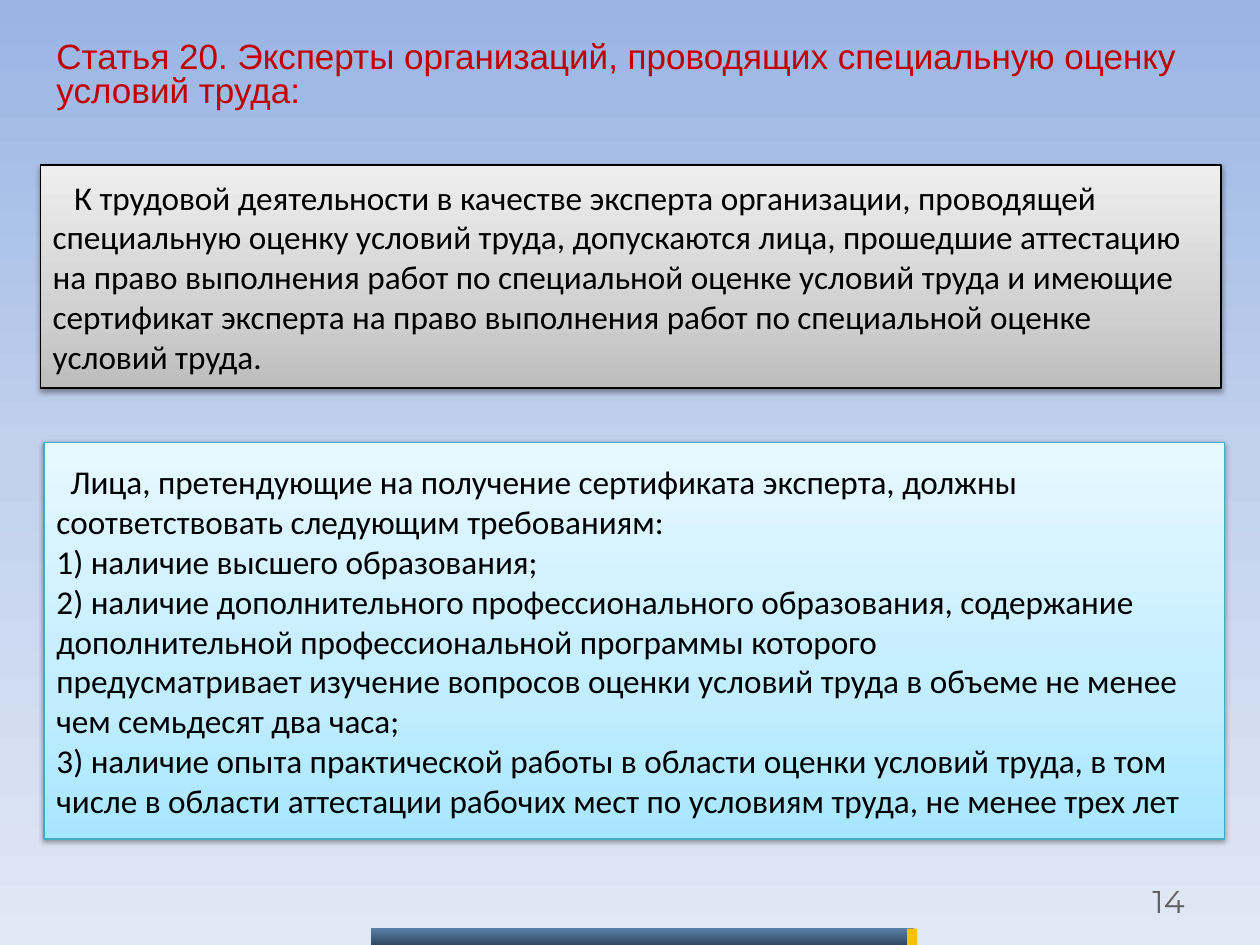
"""Build the slide on Article 20, experts of assessment organizations."""
from lxml.etree import SubElement
from pptx import Presentation
from pptx.dml.color import RGBColor as Rgb
from pptx.enum.shapes import MSO_SHAPE as Shape
from pptx.enum.text import MSO_ANCHOR as Anchor, PP_ALIGN as Align
from pptx.oxml.ns import qn
from pptx.util import Inches, Pt

HUES = {
    "sky": "9AB5E4", "haze": "C2D1ED", "mist": "E1E8F5",
    "navy": "003C73", "night": "001C35", "gold": "FFC000",
    "steel": "BDBDBD", "ash": "D1D1D1", "pale": "EEEEEE",
    "aqua": "A7E6FF", "ice": "C1EDFF", "frost": "E7F8FF",
    "teal": "46AAC5", "black": "000000", "red": "C00000", "gray": "626262",
}


def blend(part, root, stops, angle):
    part.fill.gradient()
    grad = root.find(".//" + qn("a:gradFill"))
    grad.find(qn("a:lin")).set("ang", str(angle * 60000))
    ramp = grad.find(qn("a:gsLst"))
    ramp.clear()
    for place, hue, alpha in stops:
        stop = SubElement(ramp, qn("a:gs"), pos=str(place * 1000))
        tint = SubElement(stop, qn("a:srgbClr"), val=HUES[hue])
        if alpha < 100:
            SubElement(tint, qn("a:alpha"), val=str(alpha * 1000))


def write(frame, lines, font, size, hue, **form):
    frame.word_wrap = True
    frame.vertical_anchor = Anchor.MIDDLE
    for i, line in enumerate(lines):
        para = frame.paragraphs[0] if i == 0 else frame.add_paragraph()
        for key, value in form.items():
            setattr(para, key, value)
        run = para.add_run()
        run.text = line
        for key, value in {"name": font, "size": Pt(size)}.items():
            setattr(run.font, key, value)
        run.font.color.rgb = Rgb.from_string(HUES[hue])


deck = Presentation()
deck.slide_width, deck.slide_height = Inches(10), Inches(7.5)
slide = deck.slides.add_slide(deck.slide_layouts[6])
shapes = slide.shapes
blend(slide.background, slide.element,
      [(0, "sky", 100), (50, "haze", 100), (100, "mist", 100)], 90)

labels = [
    ((8.94, 6.95, 0.56, 0.4), "14", "Montserrat", 18, "gray",
     {"alignment": Align.RIGHT}),
    ((0.35, 0.21, 9.37, 0.79),
     "Статья 20. Эксперты организаций, проводящих специальную оценку условий труда:",
     "Arial", 20, "red", {"line_spacing": 0.8}),
]
for box, words, font, size, hue, form in labels:
    label = shapes.add_textbox(*map(Inches, box))
    write(label.text_frame, [words], font, size, hue, **form)

bar, tab = [
    shapes.add_shape(Shape.RECTANGLE, *map(Inches, (left, 7.37, width, 0.13)))
    for left, width in ((2.95, 4.3), (7.2, 0.08))
]
for strip in (bar, tab):
    strip.shadow.inherit = False
    strip.line.fill.background()
blend(bar, bar.element, [(0, "navy", 60), (100, "night", 80)], 90)
tab.fill.solid()
tab.fill.fore_color.rgb = Rgb.from_string(HUES["gold"])

panels = [
    ((0.32, 1.31, 9.37, 1.77), ("steel", "ash", "pale"), "black", 0.17, [
        "К трудовой деятельности в качестве эксперта организации, проводящей "
        "специальную оценку условий труда, допускаются лица, прошедшие аттестацию "
        "на право выполнения работ по специальной оценке условий труда и имеющие "
        "сертификат эксперта на право выполнения работ по специальной оценке "
        "условий труда.",
    ]),
    ((0.35, 3.51, 9.37, 3.15), ("aqua", "ice", "frost"), "teal", 0.11, [
        "Лица, претендующие на получение сертификата эксперта, должны "
        "соответствовать следующим требованиям:",
        "1) наличие высшего образования;",
        "2) наличие дополнительного профессионального образования, содержание "
        "дополнительной профессиональной программы которого",
        "предусматривает изучение вопросов оценки условий труда в объеме не менее "
        "чем семьдесят два часа;",
        "3) наличие опыта практической работы в области оценки условий труда, в том "
        "числе в области аттестации рабочих мест по условиям труда, не менее трех лет",
    ]),
]
for box, ramp, edge, indent, lines in panels:
    panel = shapes.add_shape(Shape.RECTANGLE, *map(Inches, box))
    blend(panel, panel.element,
          [(place, hue, 100) for place, hue in zip((0, 35, 100), ramp)], 270)
    panel.line.color.rgb = Rgb.from_string(HUES[edge])
    panel.line.width = Pt(0.75)
    panel.shadow.inherit = False
    glow = SubElement(panel.element.spPr.find(qn("a:effectLst")), qn("a:outerShdw"),
                      blurRad=str(Pt(3.1)), dist=str(Pt(1.6)),
                      dir=str(90 * 60000), rotWithShape="0")
    tint = SubElement(glow, qn("a:srgbClr"), val=HUES["black"])
    SubElement(tint, qn("a:alpha"), val="38000")
    write(panel.text_frame, lines, "Calibri", 19, "black", alignment=Align.LEFT)
    first = panel.text_frame.paragraphs[0]
    first._p.get_or_add_pPr().set("indent", str(Inches(indent)))

deck.save("out.pptx")
